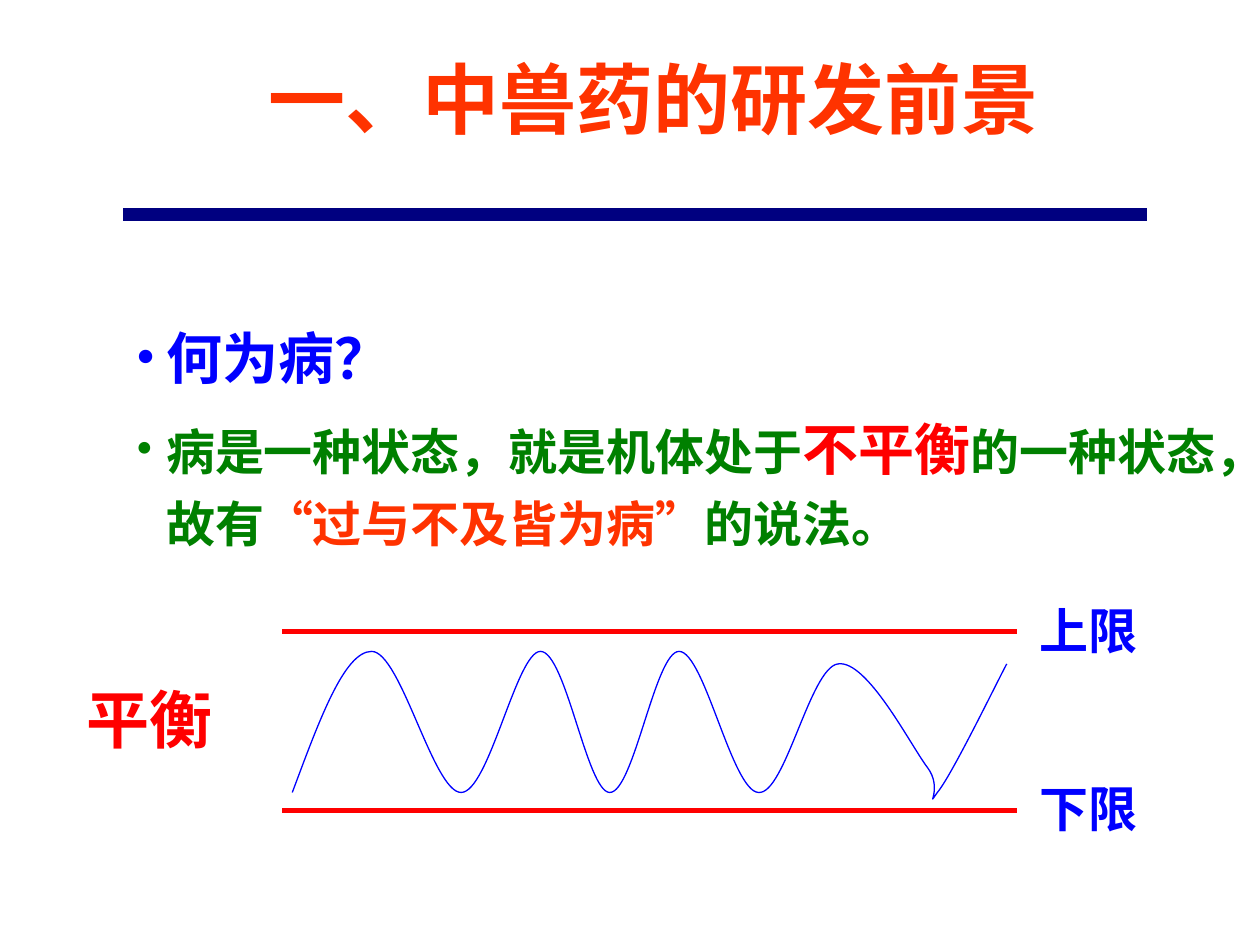
from lxml.etree import SubElement
from pptx import Presentation
from pptx.dml.color import RGBColor
from pptx.enum.shapes import MSO_CONNECTOR, MSO_SHAPE
from pptx.enum.text import MSO_ANCHOR, PP_ALIGN
from pptx.oxml.ns import qn
from pptx.util import Inches, Pt

WHITE = RGBColor(0xFF, 0xFF, 0xFF)
BLUE = RGBColor(0x00, 0x00, 0xFF)
NAVY = RGBColor(0x00, 0x00, 0x80)
GREEN = RGBColor(0x00, 0x80, 0x00)
RED = RGBColor(0xFF, 0x00, 0x00)
ORANGE = RGBColor(0xFF, 0x33, 0x00)
CJK_FONT = "Noto Sans CJK SC"


def add_run(paragraph, text, size, color, latin_font=CJK_FONT):
    run = paragraph.add_run()
    run.text = text
    run.font.size = Pt(size)
    run.font.bold = True
    run.font.color.rgb = color
    run.font.name = latin_font
    SubElement(run.font._element, qn("a:ea"), typeface=CJK_FONT)


def add_rule(left, right, y, color, width):
    """Add a horizontal line; positions in inches, width in points."""
    line = slide.shapes.add_connector(
        MSO_CONNECTOR.STRAIGHT, Inches(left), Inches(y), Inches(right), Inches(y))
    line.line.color.rgb = color
    line.line.width = Pt(width)
    SubElement(line._element.spPr, qn("a:effectLst"))


presentation = Presentation()
presentation.slide_width = Inches(10)
presentation.slide_height = Inches(7.5)
slide = presentation.slides.add_slide(presentation.slide_layouts[6])

# Body text with bullets
body = slide.shapes.add_textbox(Inches(0.98), Inches(2.41), Inches(8.82), Inches(2.05))
body.text_frame.word_wrap = True
body_paragraphs = [
    [("何为病？", 32, BLUE)],
    [("病是一种状态，就是机体处于", 28, GREEN),
     ("不平衡", 32, RED),
     ("的一种状态，故有", 28, GREEN),
     ("“过与不及皆为病”", 28, ORANGE),
     ("的说法。", 28, GREEN)],
]
for index, runs in enumerate(body_paragraphs):
    paragraph = body.text_frame.paragraphs[0] if index == 0 else body.text_frame.add_paragraph()
    paragraph.line_spacing = 1.2
    paragraph.space_before = Pt(6)
    properties = paragraph._p.get_or_add_pPr()
    properties.set("marL", str(Inches(0.24)))
    properties.set("indent", str(-Inches(0.24)))
    SubElement(properties, qn("a:buFont"), typeface="Times New Roman")
    SubElement(properties, qn("a:buChar"), char="•")
    for text, size, color in runs:
        add_run(paragraph, text, size, color, "Times New Roman")

# Upper and lower limits
for limit_y in (5.01, 6.43):
    add_rule(2.24, 8.07, limit_y, RED, 3)

# Wave between the limits: a start point, then two control points and an end per curve
wave_points = [
    (2.32, 6.29),
    (2.53, 5.73), (2.73, 5.17), (2.95, 5.17),
    (3.18, 5.17), (3.44, 6.29), (3.66, 6.29),
    (3.88, 6.29), (4.1, 5.17), (4.29, 5.17),
    (4.49, 5.17), (4.66, 6.29), (4.84, 6.29),
    (5.03, 6.29), (5.2, 5.17), (5.39, 5.17),
    (5.59, 5.17), (5.81, 6.28), (6.02, 6.29),
    (6.23, 6.31), (6.43, 5.3), (6.65, 5.27),
    (6.88, 5.23), (7.23, 5.92), (7.36, 6.09),
    (7.49, 6.26), (7.34, 6.43), (7.44, 6.29),
    (7.55, 6.16), (7.9, 5.44), (7.99, 5.27),
]
points = [(Inches(x), Inches(y)) for x, y in wave_points]
builder = slide.shapes.build_freeform(*points[0])
builder.add_line_segments(points[1:], close=False)
wave = builder.convert_to_shape()
wave.shadow.inherit = False
wave.fill.background()
wave.line.color.rgb = BLUE
wave.line.width = Pt(0.75)

# Turn every three straight segments into one Bézier curve
segments = list(wave._element.iter(qn("a:lnTo")))
outline = segments[0].getparent()
for start in range(0, len(segments), 3):
    curve = SubElement(outline, qn("a:cubicBezTo"))
    for segment in segments[start:start + 3]:
        curve.append(segment[0])
        outline.remove(segment)

# Labels beside the wave
labels = [
    ("上限", 8.15, 4.69, 1.02, 0.59, 28, BLUE),
    ("下限", 8.15, 6.11, 1.02, 0.59, 28, BLUE),
    ("平衡", 0.59, 5.32, 1.26, 0.73, 36, RED),
]
for text, left, top, width, height, size, color in labels:
    label = slide.shapes.add_textbox(Inches(left), Inches(top), Inches(width), Inches(height))
    label.text_frame.word_wrap = True
    paragraph = label.text_frame.paragraphs[0]
    paragraph.line_spacing = 1.05
    add_run(paragraph, text, size, color)

# Title and its underline
title = slide.shapes.add_shape(
    MSO_SHAPE.RECTANGLE, Inches(0.59), Inches(0.52), Inches(9.2), Inches(0.86))
title.shadow.inherit = False
title.fill.solid()
title.fill.fore_color.rgb = WHITE
title.line.fill.background()
title.text_frame.vertical_anchor = MSO_ANCHOR.TOP
title.text_frame.margin_top = title.text_frame.margin_bottom = 0
paragraph = title.text_frame.paragraphs[0]
paragraph.alignment = PP_ALIGN.CENTER
paragraph.line_spacing = 0.85
add_run(paragraph, "一、中兽药的研发前景", 44, ORANGE)
add_rule(0.98, 9.1, 1.7, NAVY, 7.5)

presentation.save("out.pptx")
